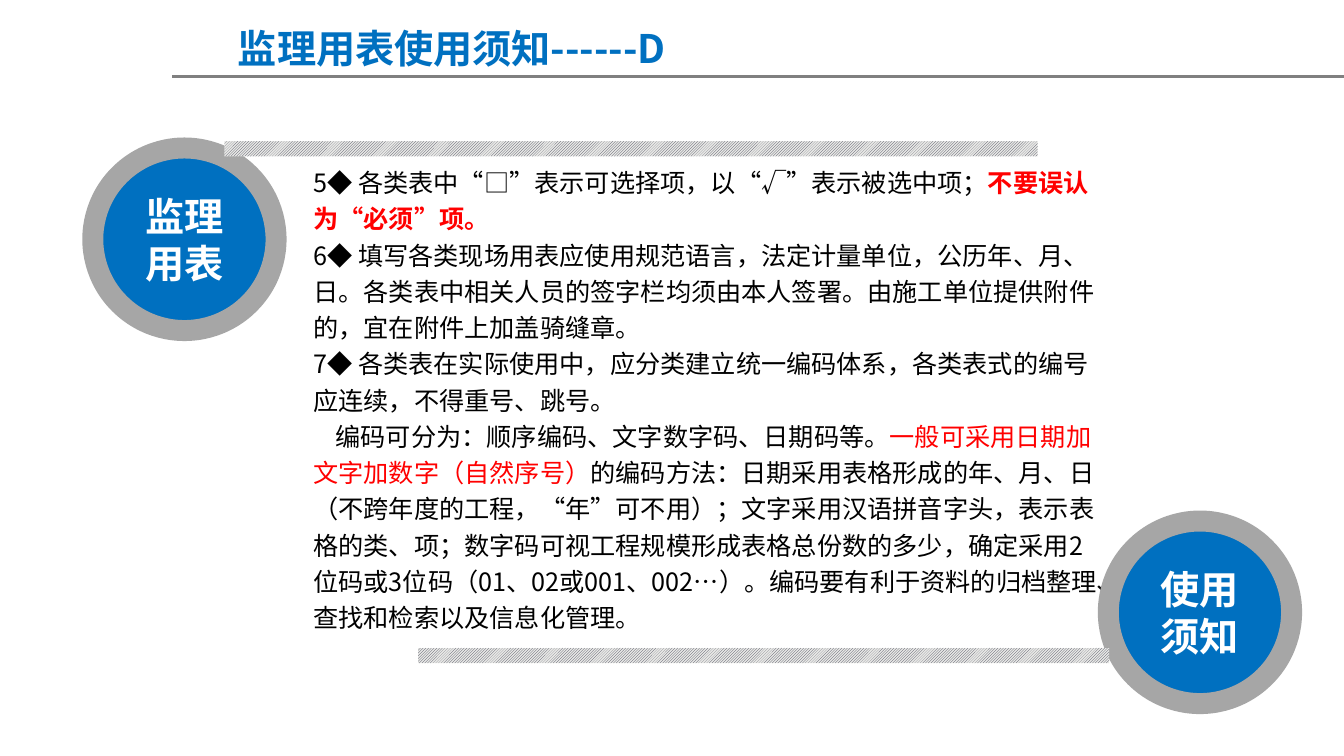
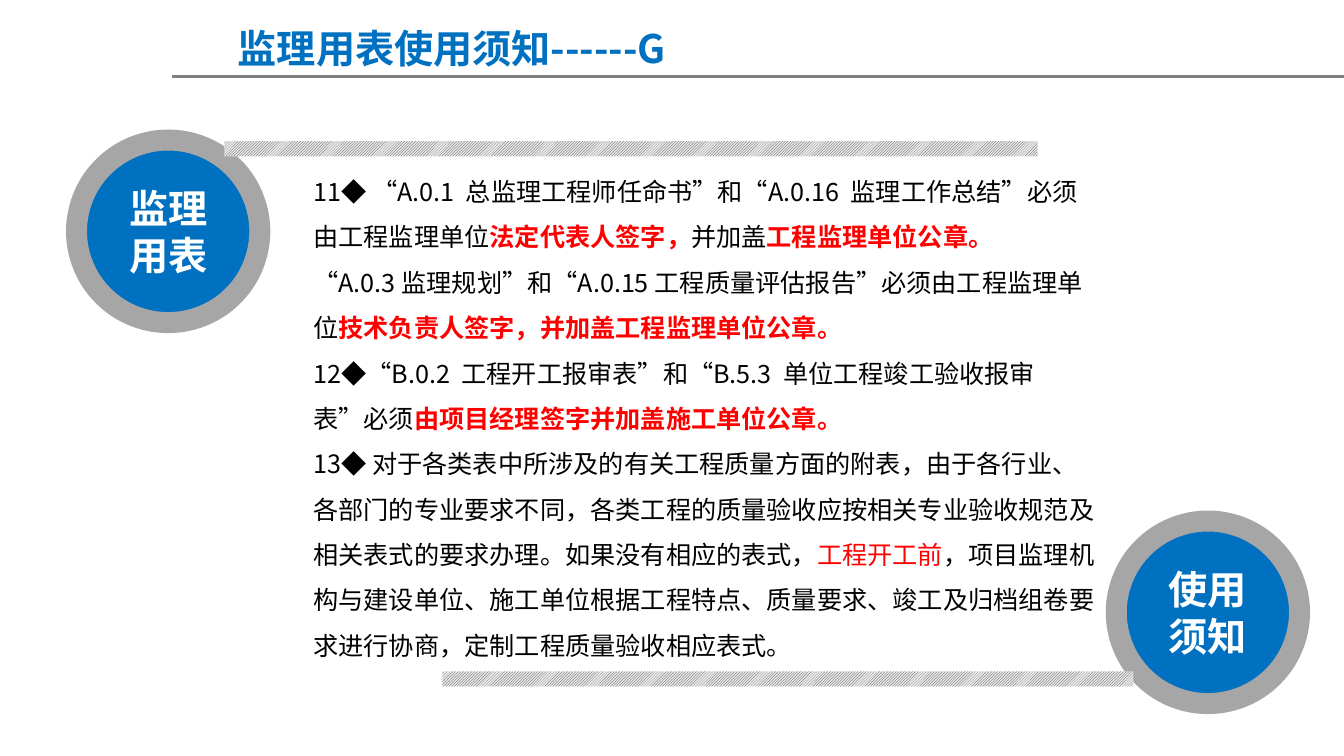
from dataclasses import dataclass
from typing import NamedTuple

from lxml import etree
from pptx import Presentation
from pptx.dml.color import RGBColor
from pptx.enum import dml, shapes, text
from pptx.oxml.ns import qn
from pptx.util import Cm, Pt

BLUE = RGBColor(0x00, 0x70, 0xC0)
RED = RGBColor(0xFF, 0x00, 0x00)
BLACK = RGBColor(0x00, 0x00, 0x00)
WHITE = RGBColor(0xFF, 0xFF, 0xFF)
RING = RGBColor(0xA6, 0xA6, 0xA6)
RULE = RGBColor(0x80, 0x80, 0x80)
HATCH = RGBColor(0x41, 0x44, 0x55)
PALE = RGBColor(0xE8, 0xE8, 0xE6)
FACE = "Noto Sans CJK SC"
WIDE, HIGH = 33.88, 19.05


class Span(NamedTuple):
    text: str
    color: RGBColor = BLACK
    bold: bool = False
    size: int = 18


class Para(NamedTuple):
    spans: list[Span]
    indent: float = 0


class Spot(NamedTuple):
    x: float
    y: float


@dataclass
class Page:
    mark: str
    first: Spot
    last: Spot
    base: Spot
    tall: float
    space: float
    paras: list[Para]


def loud(words: str) -> Span:
    return Span(words, RED, True)


def head(words: str, color: RGBColor) -> list[Para]:
    return [Para([Span(words, color, True, 28)])]


def write(frame, paras: list[Para], frame_form: dict, para_form: dict) -> None:
    for key, value in frame_form.items():
        setattr(frame, key, value)
    for num, para in enumerate(paras):
        line = frame.add_paragraph() if num else frame.paragraphs[0]
        for key, value in para_form.items():
            setattr(line, key, value)
        if para.indent:
            line._p.get_or_add_pPr().set("indent", str(Cm(para.indent)))
        for span in para.spans:
            run = line.add_run()
            run.text = span.text
            form = {"name": FACE, "size": Pt(span.size), "bold": span.bold}
            for key, value in form.items():
                setattr(run.font, key, value)
            run.font.color.rgb = span.color
            props = run._r.get_or_add_rPr()
            props.set("lang", "zh-CN")
            etree.SubElement(props, qn("a:ea"), typeface=FACE)


def box(slide, spot: Spot, wide: float, tall: float, paras: list[Para], **form) -> None:
    area = slide.shapes.add_textbox(Cm(spot.x), Cm(spot.y), Cm(wide), Cm(tall))
    fit = {"word_wrap": True, "auto_size": text.MSO_AUTO_SIZE.SHAPE_TO_FIT_TEXT}
    write(area.text_frame, paras, fit, form)


def shape(slide, kind, spot: Spot, wide: float, tall: float):
    item = slide.shapes.add_shape(kind, Cm(spot.x), Cm(spot.y), Cm(wide), Cm(tall))
    item.shadow.inherit = False
    return item


def disc(slide, spot: Spot, words: str) -> None:
    item = shape(slide, shapes.MSO_SHAPE.OVAL, spot, 4.62, 4.6)
    item.fill.solid()
    item.fill.fore_color.rgb = BLUE
    item.line.color.rgb = RING
    item.line.width = Pt(15)
    fit = {"word_wrap": True, "vertical_anchor": text.MSO_ANCHOR.MIDDLE}
    write(item.text_frame, head(words, WHITE), fit, {"alignment": text.PP_ALIGN.CENTER})


def bar(slide, spot: Spot, wide: float) -> None:
    item = shape(slide, shapes.MSO_SHAPE.RECTANGLE, spot, wide, 0.38)
    item.fill.patterned()
    item.fill.pattern = dml.MSO_PATTERN.LIGHT_UPWARD_DIAGONAL
    item.fill.fore_color.rgb = HATCH
    item.fill.back_color.rgb = PALE
    item.line.fill.background()


def rule(slide) -> None:
    line = slide.shapes.add_connector(
        shapes.MSO_CONNECTOR.STRAIGHT, Cm(4.34), Cm(1.93), Cm(WIDE), Cm(1.93))
    line.line.color.rgb = RULE
    line.line.width = Pt(2)
    etree.SubElement(line._element.spPr, qn("a:effectLst"))


def draw(deck, page: Page) -> None:
    slide = deck.slides.add_slide(deck.slide_layouts[6])
    rule(slide)
    box(slide, Spot(4.8, 0.48), 13.18, 1.45, head(f"监理用表使用须知------{page.mark}", BLUE),
        alignment=text.PP_ALIGN.CENTER)
    disc(slide, page.first, "监理用表")
    box(slide, Spot(7.65, 3.94), 20.29, page.tall, page.paras, line_spacing=page.space)
    bar(slide, Spot(5.66, 3.56), 20.5)
    disc(slide, page.last, "使用须知")
    bar(slide, page.base, 17.42)


PAGES = [
    Page("D", Spot(2.34, 3.73), Spot(27.94, 13.13), Spot(10.54, 16.33), 12.27, 1.2, [
        Para([Span("5◆ 各类表中“□”表示可选择项，以“√”表示被选中项；"),
              loud("不要误认为“必须”项。")]),
        Para([Span("6◆ 填写各类现场用表应使用规范语言，法定计量单位，公历年、月、日。"
                   "各类表中相关人员的签字栏均须由本人签署。"
                   "由施工单位提供附件的，宜在附件上加盖骑缝章。")]),
        Para([Span("7◆ 各类表在实际使用中，应分类建立统一编码体系，"
                   "各类表式的编号应连续，不得重号、跳号。")]),
        Para([Span("编码可分为：顺序编码、文字数字码、日期码等。"),
              Span("一般可采用日期加文字加数字（自然序号）", RED),
              Span("的编码方法：日期采用表格形成的年、月、日（不跨年度的工程，“年”可不用）；"
                   "文字采用汉语拼音字头，表示表格的类、项；"
                   "数字码可视工程规模形成表格总份数的多少，"
                   "确定采用2位码或3位码（01、02或001、002…）。"
                   "编码要有利于资料的归档整理、查找和检索以及信息化管理。")], 0.56),
    ]),
    Page("G", Spot(1.93, 3.53), Spot(28.14, 13.13), Spot(11.15, 16.92), 14.5, 1.5, [
        Para([Span("11◆ “A.0.1  总监理工程师任命书”和“A.0.16  监理工作总结”必须由工程监理单位"),
              loud("法定代表人签字，"), Span("并加盖"), loud("工程监理单位公章。")]),
        Para([Span("“A.0.3 监理规划”和“A.0.15 工程质量评估报告”必须由工程监理单位"),
              loud("技术负责人签字，并加盖工程监理单位公章。")]),
        Para([Span("12◆“B.0.2  工程开工报审表”和“B.5.3  单位工程竣工验收报审表”必须"),
              loud("由项目经理签字并加盖施工单位公章。")]),
        Para([Span("13◆ 对于各类表中所涉及的有关工程质量方面的附表，"
                   "由于各行业、各部门的专业要求不同，"
                   "各类工程的质量验收应按相关专业验收规范及相关表式的要求办理。"
                   "如果没有相应的表式，"),
              Span("工程开工前", RED),
              Span("，项目监理机构与建设单位、施工单位根据工程特点、质量要求、"
                   "竣工及归档组卷要求进行协商，定制工程质量验收相应表式。")]),
    ]),
]


def main() -> None:
    deck = Presentation()
    deck.slide_width, deck.slide_height = Cm(WIDE), Cm(HIGH)
    for page in PAGES:
        draw(deck, page)
    deck.save("out.pptx")


if __name__ == "__main__":
    main()
